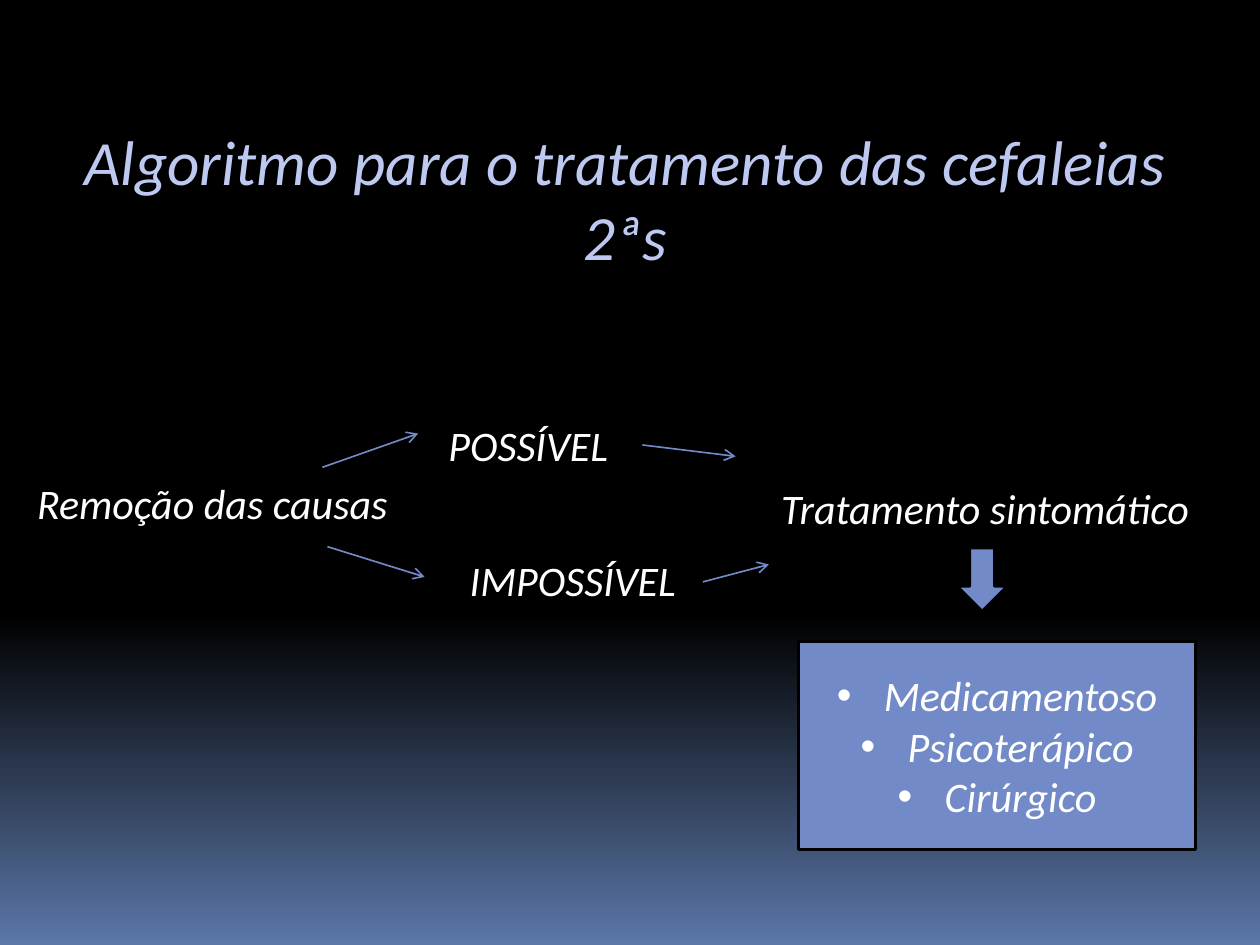
from copy import deepcopy
from pptx import Presentation
from pptx.dml.color import RGBColor
from pptx.enum.shapes import MSO_CONNECTOR, MSO_SHAPE
from pptx.enum.text import MSO_ANCHOR, MSO_AUTO_SIZE, PP_ALIGN
from pptx.oxml.ns import qn
from pptx.util import Cm, Pt
from lxml.etree import SubElement


def color(value):
    return RGBColor.from_string(value)


def write(box, lines, size, text_color):
    frame = box.text_frame
    frame.text = "\n".join(lines)
    frame.word_wrap = True
    frame.auto_size = MSO_AUTO_SIZE.NONE
    for paragraph in frame.paragraphs:
        for span in paragraph.runs:
            span.font.name = "Calibri"
            span.font.size = Pt(size)
            span.font.italic = True
            span.font.color.rgb = color(text_color)


deck = Presentation()
deck.slide_width, deck.slide_height = Cm(25.4), Cm(19.05)
page = deck.slides.add_slide(deck.slide_layouts[5])

background = page.background.fill
background.gradient()
background.gradient_angle = 270
stop_list = page.element.find(".//" + qn("a:gsLst"))
stop_list.insert(0, deepcopy(stop_list[0]))
stops = [(0, "000000"), (0.65, "000000"), (1, "5B77A8")]
for stop, (position, stop_color) in zip(background.gradient_stops, stops):
    stop.position = position
    stop.color.rgb = color(stop_color)

title = page.shapes.title
title.left, title.top, title.width, title.height = Cm(0.5), Cm(2.34), Cm(24.2), Cm(1.8)
write(title, ["Algoritmo para o tratamento das cefaleias 2ªs"], 36, "BEC9F1")
title.text_frame.vertical_anchor = MSO_ANCHOR.TOP
title.text_frame.paragraphs[0].alignment = PP_ALIGN.CENTER

labels = [
    ("Remoção das causas", 0.5, 9.5, 16.6),
    ("POSSÍVEL", 8.79, 8.33, 4.5),
    ("IMPOSSÍVEL", 9.22, 11.05, 5.49),
    ("Tratamento sintomático", 15.5, 9.6, 9.2),
]
for label, left, top, width in labels:
    box = page.shapes.add_textbox(Cm(left), Cm(top), Cm(width), Cm(1.28))
    write(box, [label], 24, "FFFFFF")

arrows = [
    (6.5, 9.42, 8.43, 8.74),
    (6.6, 11.02, 8.56, 11.63),
    (12.95, 8.97, 14.83, 9.2),
    (14.17, 11.73, 15.5, 11.38),
]
for ends in arrows:
    arrow = page.shapes.add_connector(MSO_CONNECTOR.STRAIGHT, *map(Cm, ends))
    arrow.line.color.rgb = color("738AC8")
    arrow.line.width = Pt(0.94)
    SubElement(arrow.line._get_or_add_ln(), qn("a:tailEnd"), type="arrow")
    SubElement(arrow._element.spPr, qn("a:effectLst"))

down_arrow = page.shapes.add_shape(MSO_SHAPE.DOWN_ARROW, Cm(19.3), Cm(11.05), Cm(1), Cm(1.27))
treatments = page.shapes.add_shape(MSO_SHAPE.RECTANGLE, Cm(16.1), Cm(12.93), Cm(8), Cm(4.2))
for shape in (down_arrow, treatments):
    shape.shadow.inherit = False
    shape.fill.solid()
    shape.fill.fore_color.rgb = color("738AC8")
    shape.line.color.rgb = color("000000")
    shape.line.width = Pt(1.5)

write(treatments, ["Medicamentoso", "Psicoterápico", "Cirúrgico"], 24, "FFFFFF")
treatments.text_frame.vertical_anchor = MSO_ANCHOR.MIDDLE
for paragraph in treatments.text_frame.paragraphs:
    paragraph.alignment = PP_ALIGN.CENTER
    properties = paragraph._p.get_or_add_pPr()
    properties.set("marL", str(Cm(0.95)))
    properties.set("indent", str(-Cm(0.95)))
    SubElement(properties, qn("a:buFont"), typeface="Arial")
    SubElement(properties, qn("a:buChar"), char="•")

deck.save("out.pptx")
